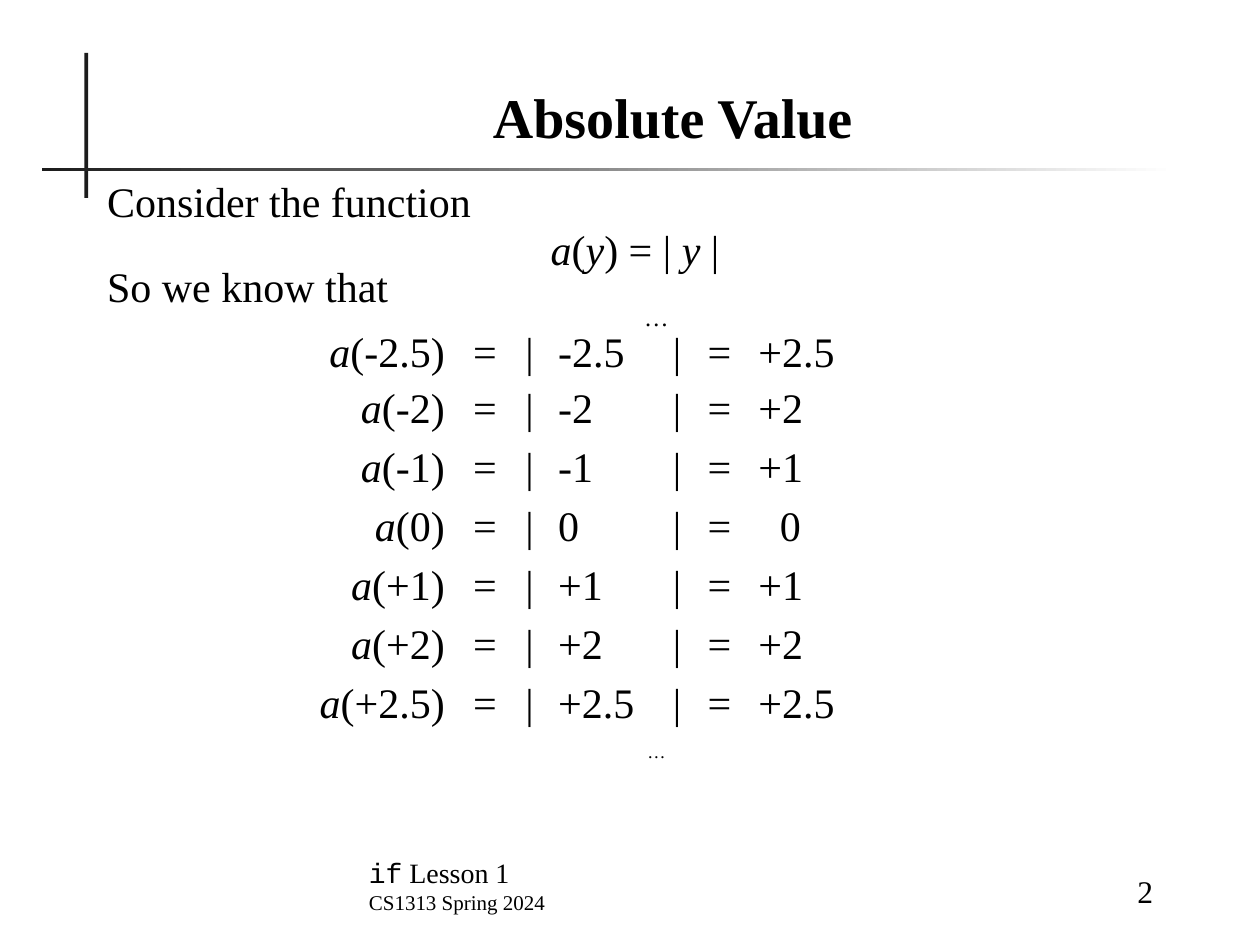
import pptx
import pptx.dml.color
import pptx.enum.shapes
import pptx.enum.text
import pptx.oxml.ns
import pptx.util
from pptx.util import Inches
import lxml.etree

COLORS = {"text": "000000", "rule": "1C1C1C", "background": "FFFFFF"}
SERIF, MONO = "Times New Roman", "Courier New"
ALIGN = pptx.enum.text.PP_ALIGN
ANCHOR = pptx.enum.text.MSO_ANCHOR


def color(name):
    return pptx.dml.color.RGBColor.from_string(COLORS[name])


def write(paragraph, text, size=24, font=SERIF, italic=False, bold=False,
          align=ALIGN.LEFT, line_spacing=None, before=0):
    """Append a formatted run and set the format of its paragraph."""
    paragraph.alignment = align
    paragraph.space_before = pptx.util.Pt(before)
    if line_spacing:
        paragraph.line_spacing = line_spacing
    run = paragraph.add_run()
    run.text = text
    run.font.size = pptx.util.Pt(size)
    run.font.name = font
    run.font.italic = italic
    run.font.bold = bold
    run.font.color.rgb = color("text")
    return run


def place(shape, box):
    shape.left, shape.top, shape.width, shape.height = map(Inches, box)


def remove_borders(cell):
    """Give all four sides of a cell an empty line."""
    properties = cell._tc.get_or_add_tcPr()
    for index, side in enumerate(("lnL", "lnR", "lnT", "lnB")):
        line = lxml.etree.Element(pptx.oxml.ns.qn(f"a:{side}"), w="0")
        lxml.etree.SubElement(line, pptx.oxml.ns.qn("a:noFill"))
        properties.insert(index, line)


def add_rules(slide, vertical_box, horizontal_box):
    for box in (vertical_box, horizontal_box):
        rule = slide.shapes.add_shape(
            pptx.enum.shapes.MSO_SHAPE.RECTANGLE, *map(Inches, box))
        rule.shadow.inherit = False
        rule.line.fill.background()
        if box is vertical_box:
            rule.fill.solid()
            rule.fill.fore_color.rgb = color("rule")
        else:
            rule.fill.gradient()
            rule.fill.gradient_angle = 0
            for stop, name in zip(rule.fill.gradient_stops, ("rule", "background")):
                stop.color.rgb = color(name)
            rule.fill.gradient_stops[0].position = 0
            rule.fill.gradient_stops[1].position = 1


def add_title(slide, box):
    title = slide.shapes.title
    place(title, box)
    title.text_frame.vertical_anchor = ANCHOR.BOTTOM
    write(title.text_frame.paragraphs[0], "Absolute Value", size=32, bold=True,
          align=ALIGN.CENTER)


def add_body(slide, box):
    body = slide.placeholders[1]
    place(body, box)
    frame = body.text_frame
    frame.margin_top = Inches(0.05)
    lines = [
        ([("Consider the function", False)], ALIGN.LEFT, 0.8, 0),
        ([("a", True), ("(", False), ("y", True), (") = | ", False),
          ("y", True), (" |", False)], ALIGN.CENTER, 0.8, 4.5),
        ([("So we know that", False)], ALIGN.LEFT, 0.5, 5),
    ]
    for index, (runs, align, spacing, before) in enumerate(lines):
        paragraph = frame.add_paragraph() if index else frame.paragraphs[0]
        properties = paragraph._p.get_or_add_pPr()
        properties.set("marL", "0")
        properties.set("indent", "0")
        lxml.etree.SubElement(properties, pptx.oxml.ns.qn("a:buNone"))
        for text, italic in runs:
            write(paragraph, text, italic=italic, align=align,
                  line_spacing=spacing, before=before)


def add_values_table(slide, box):
    values = [("-2.5", "+2.5"), ("-2", "+2"), ("-1", "+1"), ("0", "0"),
              ("+1", "+1"), ("+2", "+2"), ("+2.5", "+2.5")]
    widths = [1.38, 0.44, 0.26, 0.91, 0.26, 0.42, 2.25]
    heights = [0.29, 0.35] + [0.47] * 6 + [0.53]
    alignments = [ALIGN.RIGHT, ALIGN.CENTER, ALIGN.LEFT, ALIGN.LEFT,
                  ALIGN.CENTER, ALIGN.CENTER, ALIGN.LEFT]
    table = slide.shapes.add_table(
        len(heights), len(widths), *map(Inches, box)).table
    table.first_row = table.horz_banding = False
    for column, width in zip(table.columns, widths):
        column.width = Inches(width)
    for row, height in zip(table.rows, heights):
        row.height = Inches(height)
    for cell in table.iter_cells():
        cell.fill.background()
        remove_borders(cell)
        cell.vertical_anchor = ANCHOR.BOTTOM
        cell.margin_top, cell.margin_bottom = 0, Inches(0.06)

    # Ellipsis rows above and below the values
    last = len(heights) - 1
    for row, size in ((0, 14), (last, 18)):
        cell = table.cell(row, 0)
        cell.merge(table.cell(row, len(widths) - 1))
        cell.margin_bottom = Inches(0.04)
        run = write(cell.text_frame.paragraphs[0], "…", size=size,
                    align=ALIGN.CENTER)
    run.font._element.set("baseline", "30000")
    cell.vertical_anchor = ANCHOR.TOP
    cell.margin_top = Inches(0.03)

    # One equation per row
    for row, (argument, result) in enumerate(values, start=1):
        texts = [f"({argument})", "=", "|", argument, "|", "=", result]
        for column, (text, align) in enumerate(zip(texts, alignments)):
            cell = table.cell(row, column)
            paragraph = cell.text_frame.paragraphs[0]
            style = {"align": align, "line_spacing": 0.6 if row == 1 else None}
            if column == 0:
                write(paragraph, "a", italic=True, **style)
            write(paragraph, text, **style)
        if result == "0":
            cell.margin_left = Inches(0.27)


def add_footer(slide, lesson_box, number_box):
    lesson, number = (slide.shapes.add_textbox(*map(Inches, box)).text_frame
                      for box in (lesson_box, number_box))
    for frame in (lesson, number):
        frame.word_wrap = True
        frame.vertical_anchor = ANCHOR.BOTTOM
    write(lesson.paragraphs[0], "if", size=16, font=MONO)
    write(lesson.paragraphs[0], " Lesson 1", size=16)
    write(lesson.add_paragraph(), "CS1313 Spring 2024", size=12)
    write(number.paragraphs[0], "2", size=18, align=ALIGN.RIGHT)


def main():
    presentation = pptx.Presentation()
    presentation.slide_width, presentation.slide_height = Inches(10), Inches(7.5)
    slide = presentation.slides.add_slide(presentation.slide_layouts[1])
    slide.background.fill.solid()
    slide.background.fill.fore_color.rgb = color("background")
    add_rules(slide, (0.67, 0.42, 0.03, 1.15), (0.33, 1.33, 9, 0.03))
    add_footer(slide, (2.83, 6.81, 4.83, 0.5), (7.83, 6.77, 1.42, 0.5))
    add_values_table(slide, (2.25, 2.38, 5.92, 3.99))
    add_body(slide, (0.75, 1.42, 8.58, 1.33))
    add_title(slide, (1.08, 0.5, 8.52, 0.74))
    presentation.save("out.pptx")


if __name__ == "__main__":
    main()
